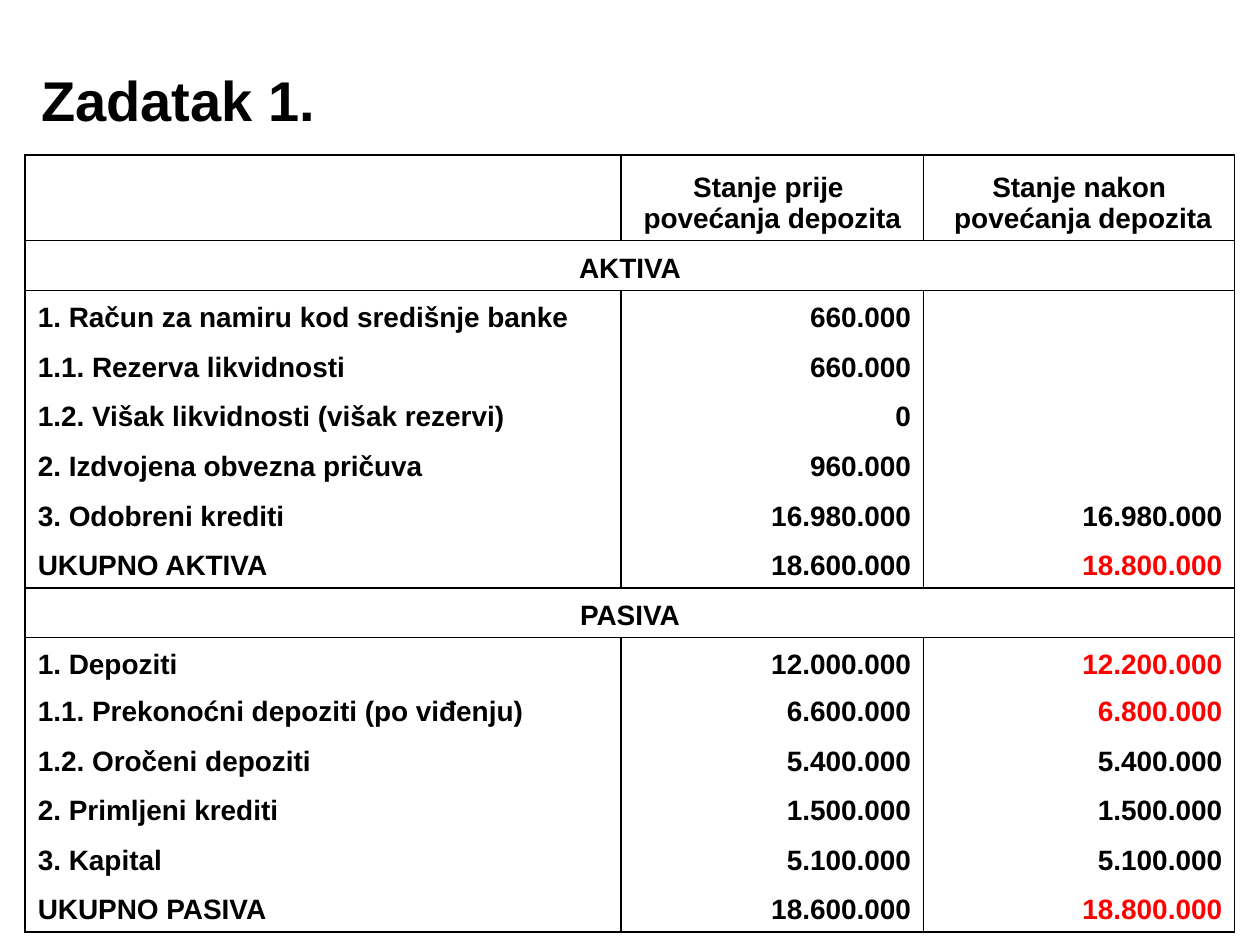
from lxml.etree import SubElement
from pptx import Presentation
from pptx.dml.color import RGBColor
from pptx.enum.text import MSO_ANCHOR, PP_ALIGN
from pptx.oxml.ns import qn
from pptx.util import Inches, Pt

TITLE = "Zadatak 1."
HEAD = ["", "Stanje prije \npovećanja depozita", "Stanje nakon\n povećanja depozita"]
# A leading "!" marks a changed amount.
PARTS = [
    ("AKTIVA", [
        ("1. Račun za namiru kod središnje banke", "660.000", ""),
        ("1.1. Rezerva likvidnosti", "660.000", ""),
        ("1.2. Višak likvidnosti (višak rezervi)", "0", ""),
        ("2. Izdvojena obvezna pričuva", "960.000", ""),
        ("3. Odobreni krediti", "16.980.000", "16.980.000"),
        ("UKUPNO AKTIVA", "18.600.000", "!18.800.000"),
    ]),
    ("PASIVA", [
        ("1. Depoziti", "12.000.000", "!12.200.000"),
        ("1.1. Prekonoćni depoziti (po viđenju)", "6.600.000", "!6.800.000"),
        ("1.2. Oročeni depoziti", "5.400.000", "5.400.000"),
        ("2. Primljeni krediti", "1.500.000", "1.500.000"),
        ("3. Kapital", "5.100.000", "5.100.000"),
        ("UKUPNO PASIVA", "18.600.000", "!18.800.000"),
    ]),
]
THEME = {"font": "Arial", "title": 32, "body": 16, "line": 1,
         "ink": "000000", "mark": "FF0000"}
WIDTHS = [4.73, 2.4, 2.47]
LEFT, TOP, HEIGHT = 0.2, 1.23, 6.17
HEAD_H, SHORT_H, SHORT_ROW = 0.68, 0.37, 10


def style(frame, size, color, align):
    for para in frame.paragraphs:
        para.alignment = align
        for run in para.runs:
            font = run.font
            font.name, font.size, font.bold = THEME["font"], Pt(size), True
            font.color.rgb = RGBColor.from_string(color)
        if not para.runs:  # keeps an empty cell from stretching its row
            SubElement(para._p, qn("a:endParaRPr"), sz=str(size * 100))


def border(cell, sides):
    """Draw the named sides (of L, R, T, B) and clear the others."""
    props = cell._tc.get_or_add_tcPr()
    for side in "LRTB":
        line = SubElement(props, qn("a:ln" + side), w=str(Pt(THEME["line"])))
        if side in sides:
            fill = SubElement(line, qn("a:solidFill"))
            SubElement(fill, qn("a:srgbClr"), val=THEME["ink"])
        else:
            SubElement(line, qn("a:noFill"))


def fill_row(table, row, texts, aligns, sides):
    for col, (text, align) in enumerate(zip(texts, aligns)):
        cell = table.cell(row, col)
        color = THEME["mark" if text.startswith("!") else "ink"]
        cell.text_frame.text = text.lstrip("!")
        style(cell.text_frame, THEME["body"], color, align)
        cell.vertical_anchor = MSO_ANCHOR.BOTTOM
        border(cell, sides)
        cell.fill.background()


def add_sheet(slide):
    count = 1 + sum(1 + len(items) for _, items in PARTS)
    step = (HEIGHT - HEAD_H - SHORT_H) / (count - 2)
    table = slide.shapes.add_table(
        count, len(WIDTHS), Inches(LEFT), Inches(TOP),
        Inches(sum(WIDTHS)), Inches(HEIGHT)).table
    table.first_row = table.horz_banding = False
    for col, width in zip(table.columns, WIDTHS):
        col.width = Inches(width)
    for row in table.rows:
        row.height = Inches(step)
    table.rows[0].height = Inches(HEAD_H)
    table.rows[SHORT_ROW].height = Inches(SHORT_H)

    mid = [PP_ALIGN.CENTER] * 3
    cols = [PP_ALIGN.LEFT, PP_ALIGN.RIGHT, PP_ALIGN.RIGHT]
    fill_row(table, 0, HEAD, mid, "LRTB")
    row = 1
    for name, items in PARTS:
        fill_row(table, row, [name, "", ""], mid, "LRTB")
        table.cell(row, 0).merge(table.cell(row, 2))
        for num, item in enumerate(items, 1):
            sides = "LR" + "T" * (num == 1) + "B" * (num == len(items))
            fill_row(table, row + num, item, cols, sides)
        row += 1 + len(items)


def main():
    deck = Presentation()
    deck.slide_width, deck.slide_height = Inches(10), Inches(7.5)
    slide = deck.slides.add_slide(deck.slide_layouts[6])
    add_sheet(slide)
    box = slide.shapes.add_textbox(Inches(0.23), Inches(0.47), Inches(2.39), Inches(0.64))
    box.text_frame.word_wrap = False
    box.text_frame.text = TITLE
    style(box.text_frame, THEME["title"], THEME["ink"], PP_ALIGN.LEFT)
    deck.save("out.pptx")


if __name__ == "__main__":
    main()
